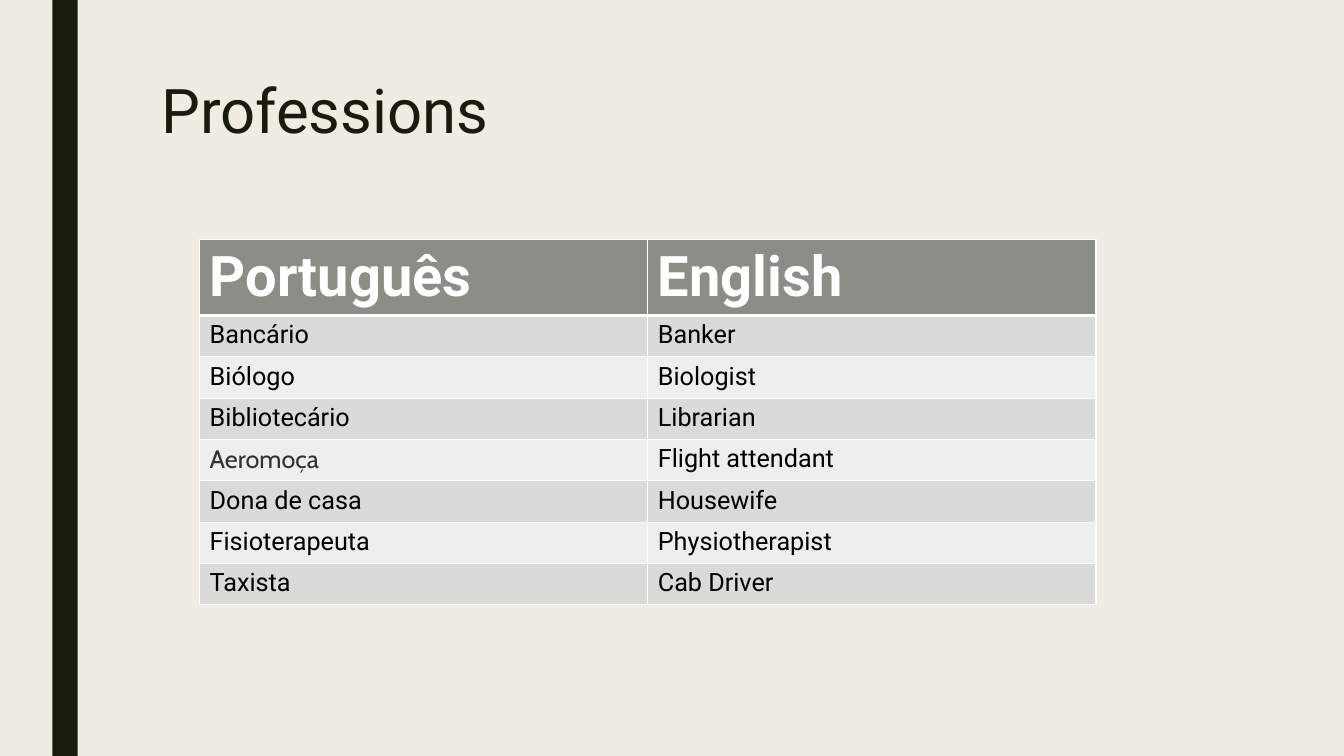
from dataclasses import dataclass

from lxml import etree
from pptx import Presentation
from pptx import util as u
from pptx.dml.color import RGBColor
from pptx.enum import shapes, text
from pptx.oxml import ns

DARK, WHITE, BLACK = "191B0E", "FFFFFF", "000000"
HEADER_FILL = "8C8D86"
BAND_FILLS = ("DADBD9", "EEEEED")
HEADER_HEIGHT, ROW_HEIGHT = 0.74, 0.41


@dataclass
class Profession:
    portuguese: str
    english: str
    portuguese_font: str = "Roboto"
    portuguese_color: str = BLACK


PROFESSIONS = [
    Profession("Bancário", "Banker"),
    Profession("Biólogo", "Biologist"),
    Profession("Bibliotecário", "Librarian"),
    Profession("Aeromoça", "Flight attendant", "Cabin", "303030"),
    Profession("Dona de casa", "Housewife"),
    Profession("Fisioterapeuta", "Physiotherapist"),
    Profession("Taxista", "Cab Driver"),
]


def set_fill(target, color: str) -> None:
    target.fill.solid()
    target.fill.fore_color.rgb = RGBColor.from_string(color)


def write_text(frame, content: str, *, size: float, color: str = BLACK,
               font: str = "Roboto", bold: bool = False,
               line_spacing: float = 1.0) -> None:
    paragraph = frame.paragraphs[0]
    paragraph.alignment = text.PP_ALIGN.LEFT
    paragraph.line_spacing = line_spacing
    run = paragraph.add_run()
    run.text = content
    run.font.name = font
    run.font.size = u.Pt(size)
    run.font.bold = bold
    run.font.color.rgb = RGBColor.from_string(color)


def set_borders(cell, widths: dict[str, float]) -> None:
    """Border elements must come before the cell's fill."""
    properties = cell._tc.get_or_add_tcPr()
    for index, (side, width) in enumerate(widths.items()):
        line = etree.Element(ns.qn(f"a:ln{side}"), w=str(u.Pt(width)))
        fill = etree.SubElement(line, ns.qn("a:solidFill"))
        etree.SubElement(fill, ns.qn("a:srgbClr"), val=WHITE)
        properties.insert(index, line)


def format_cell(cell, content: str, fill: str, *, top: float = 1,
                bottom: float = 1, **text_format) -> None:
    set_fill(cell, fill)
    set_borders(cell, {"L": 1, "R": 1, "T": top, "B": bottom})
    write_text(cell.text_frame, content, **text_format)


def add_side_bar(slide) -> None:
    bar = slide.shapes.add_shape(
        shapes.MSO_SHAPE.RECTANGLE,
        u.Inches(0.52), 0, u.Inches(0.25), u.Inches(7.5))
    bar.shadow.inherit = False
    set_fill(bar, DARK)
    bar.line.fill.background()


def add_title(slide, content: str) -> None:
    title = slide.shapes.title
    title.left, title.top = u.Inches(1.5), u.Inches(0.75)
    title.width, title.height = u.Inches(10.5), u.Inches(1.62)
    title.text_frame.vertical_anchor = text.MSO_ANCHOR.TOP
    write_text(title.text_frame, content, size=44, color=DARK,
               line_spacing=0.89)


def add_professions_table(slide) -> None:
    height = HEADER_HEIGHT + ROW_HEIGHT * len(PROFESSIONS)
    table = slide.shapes.add_table(
        len(PROFESSIONS) + 1, 2, u.Inches(1.98), u.Inches(2.38),
        u.Inches(8.89), u.Inches(height)).table
    for row in table.rows:
        row.height = u.Inches(ROW_HEIGHT)
    table.rows[0].height = u.Inches(HEADER_HEIGHT)

    # Header row
    for column, heading in enumerate(("Português", "English")):
        format_cell(table.cell(0, column), heading, HEADER_FILL, bottom=3,
                    size=40, color=WHITE, bold=True)

    # Banded rows
    for index, profession in enumerate(PROFESSIONS):
        fill = BAND_FILLS[index % 2]
        top = 3 if index == 0 else 1
        format_cell(table.cell(index + 1, 0), profession.portuguese, fill,
                    top=top, size=18, font=profession.portuguese_font,
                    color=profession.portuguese_color)
        format_cell(table.cell(index + 1, 1), profession.english, fill,
                    top=top, size=18)


def main() -> None:
    presentation = Presentation()
    presentation.slide_width = u.Inches(13.33)
    presentation.slide_height = u.Inches(7.5)
    slide = presentation.slides.add_slide(presentation.slide_layouts[5])
    set_fill(slide.background, "EFEDE3")
    add_side_bar(slide)
    add_title(slide, "Professions")
    add_professions_table(slide)
    presentation.save("out.pptx")


if __name__ == "__main__":
    main()
